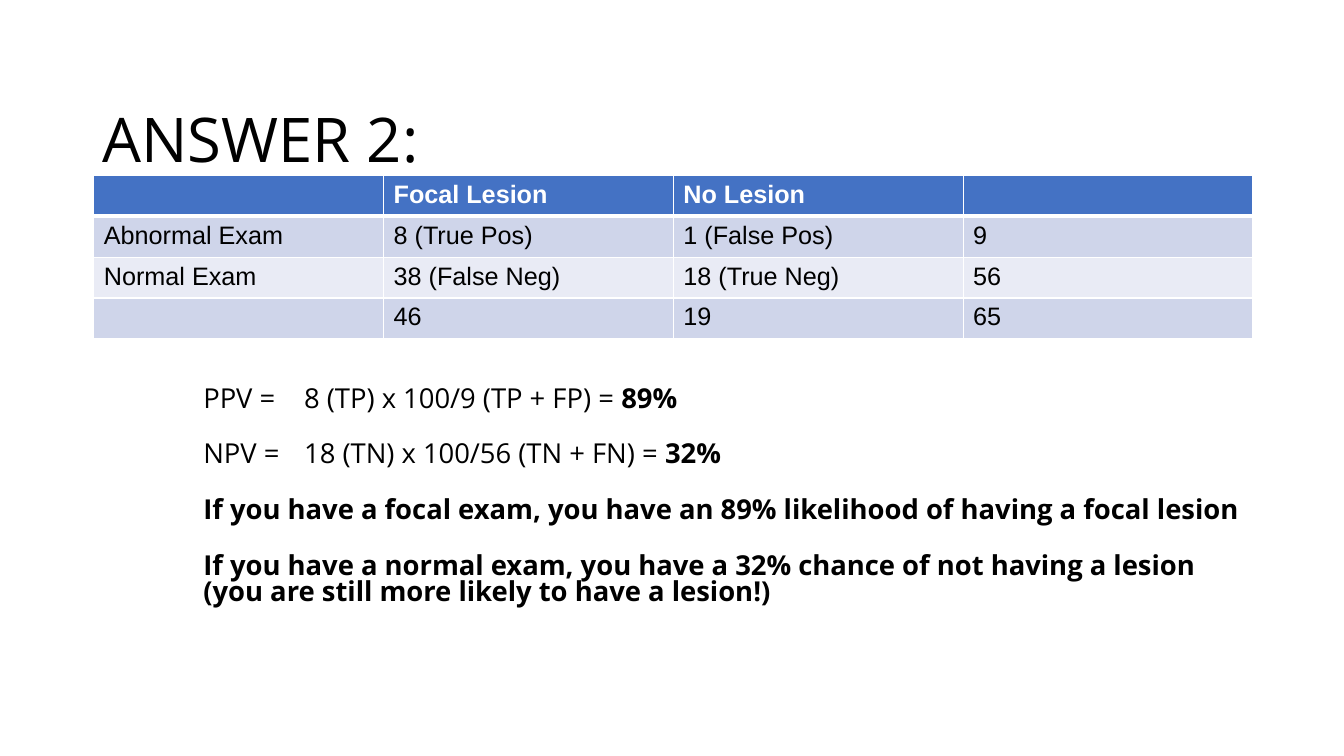
from dataclasses import dataclass

from lxml.etree import SubElement
from pptx import Presentation
from pptx.dml.color import RGBColor
from pptx.enum.text import MSO_ANCHOR
from pptx.oxml.ns import qn
from pptx.util import Pt


@dataclass(frozen=True)
class Theme:
    text_font: str = "Open Sans"
    table_font: str = "Arial"
    title_size: float = 44
    body_size: float = 19.6
    table_size: float = 18
    ink: str = "000000"
    white: str = "FFFFFF"
    header: str = "4472C4"
    bands: tuple = ("CFD5EA", "E9EBF5")


THEME = Theme()

EXAM_RESULTS = [
    ["", "Focal Lesion", "No Lesion", ""],
    ["Abnormal Exam", "8 (True Pos)", "1 (False Pos)", "9"],
    ["Normal Exam", "38 (False Neg)", "18 (True Neg)", "56"],
    ["", "46", "19", "65"],
]

CONCLUSIONS = [
    [("PPV = \t8 (TP) x 100/9 (TP + FP) = ", False), ("89%", True)],
    [("NPV = \t18 (TN) x 100/56 (TN + FN) = ", False), ("32%", True)],
    [("If you have a focal exam, you have an 89% likelihood of having a focal lesion", True)],
    [("If you have a normal exam, you have a 32% chance of not having a lesion "
      "(you are still more likely to have a lesion!)", True)],
]


def add_span(para, text, font, size, color, bold=False):
    span = para.add_run()
    span.text = text
    span.font.name = font
    span.font.size = Pt(size)
    span.font.bold = bold
    span.font.color.rgb = RGBColor.from_string(color)


def add_box(page, left, top, width, height):
    frame = page.shapes.add_textbox(Pt(left), Pt(top), Pt(width), Pt(height)).text_frame
    frame.word_wrap = True
    return frame


def add_title(page, text):
    frame = add_box(page, 66.2, 74.2, 828, 59)
    frame.vertical_anchor = MSO_ANCHOR.MIDDLE
    para = frame.paragraphs[0]
    para.line_spacing = 0.8
    add_span(para, text, THEME.text_font, THEME.title_size, THEME.ink)


def add_conclusions(page, lines):
    frame = add_box(page, 66.2, 248.4, 828, 237.6)
    frame.margin_top = Pt(28.4)
    for index, spans in enumerate(lines):
        para = frame.add_paragraph() if index else frame.paragraphs[0]
        para.line_spacing = 0.79
        para.space_before = Pt(21.2 if index else 0)
        properties = para._p.get_or_add_pPr()
        properties.set("marL", str(Pt(72)))
        properties.set("indent", "0")
        for text, bold in spans:
            add_span(para, text, THEME.text_font, THEME.body_size, THEME.ink, bold)


def set_borders(cell, widths):
    properties = cell._tc.get_or_add_tcPr()
    for index, (side, width) in enumerate(widths.items()):
        line = SubElement(properties, qn(f"a:{side}"), w=str(Pt(width)))
        fill = SubElement(line, qn("a:solidFill"))
        SubElement(fill, qn("a:srgbClr"), val=THEME.white)
        properties.insert(index, line)


def add_exam_table(page, rows):
    row_count, column_count = len(rows), len(rows[0])
    table = page.shapes.add_table(
        row_count, column_count, Pt(67), Pt(125.3), Pt(828), Pt(116.8)
    ).table
    table.horz_banding = False
    for row_index, values in enumerate(rows):
        is_header = row_index == 0
        background = THEME.header if is_header else THEME.bands[(row_index - 1) % 2]
        color = THEME.white if is_header else THEME.ink
        for column_index, value in enumerate(values):
            cell = table.cell(row_index, column_index)
            cell.fill.solid()
            cell.fill.fore_color.rgb = RGBColor.from_string(background)
            set_borders(cell, {
                "lnL": 1,
                "lnR": 1,
                "lnT": 3 if row_index == 1 else 1,
                "lnB": 3 if is_header else 1,
            })
            if value:
                add_span(cell.text_frame.paragraphs[0], value, THEME.table_font,
                         THEME.table_size, color, is_header)


def main():
    deck = Presentation()
    deck.slide_width, deck.slide_height = Pt(960), Pt(540)
    page = deck.slides.add_slide(deck.slide_layouts[6])
    add_title(page, "ANSWER 2:")
    add_conclusions(page, CONCLUSIONS)
    add_exam_table(page, EXAM_RESULTS)
    deck.save("out.pptx")


if __name__ == "__main__":
    main()
